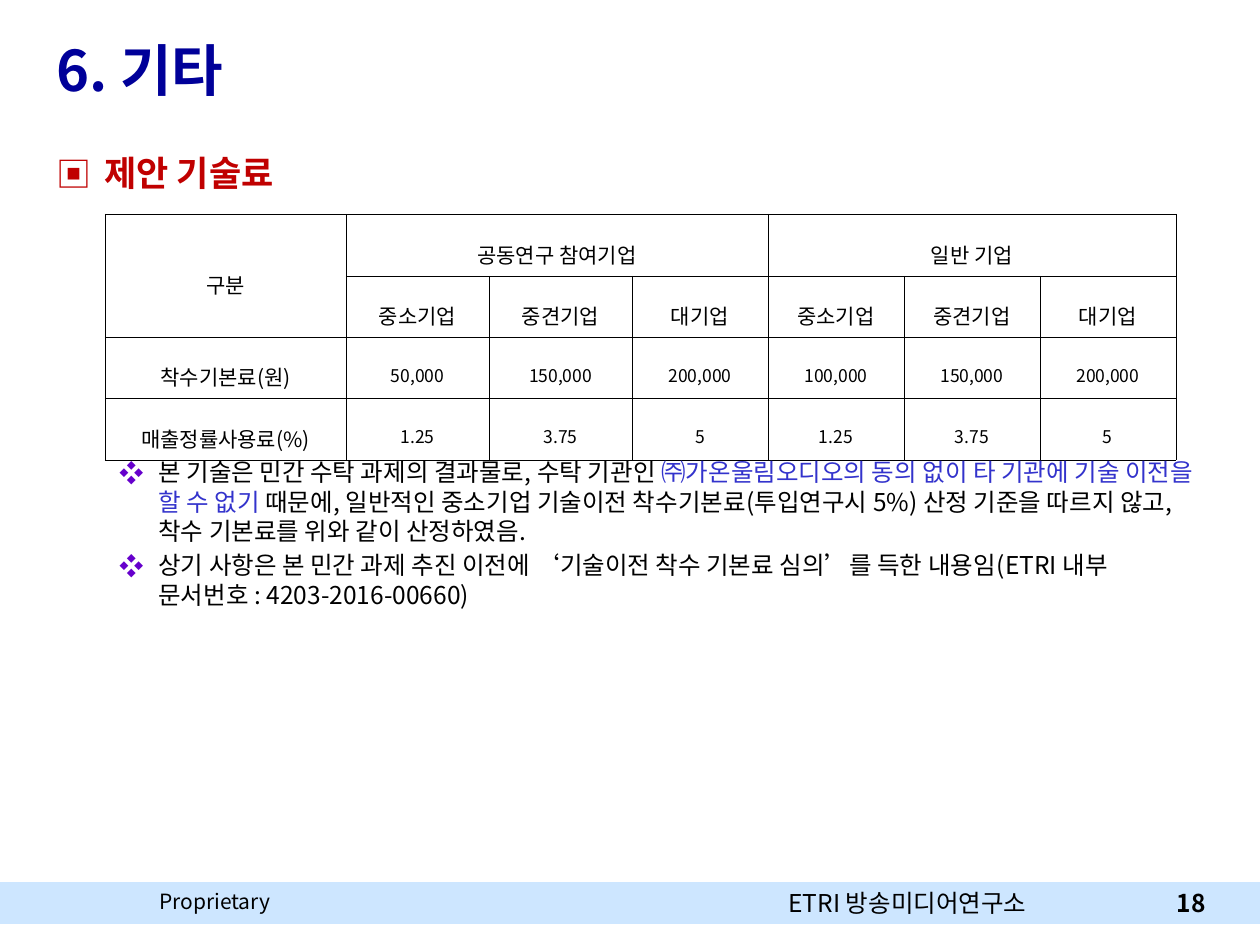
from pptx import Presentation
from pptx.dml.color import RGBColor
from pptx.enum.shapes import MSO_SHAPE
from pptx.enum.text import MSO_ANCHOR, PP_ALIGN
from pptx.oxml.ns import qn
from pptx.util import Emu, Pt
from lxml.etree import SubElement

PX = 914400 // 126
FONT = "Noto Sans CJK KR"
COLORS = {"black": "000000", "title": "000099", "heading": "C00000",
          "marker": "6600CC", "accent": "3333CC", "footer": "CDE6FF"}

TITLE = "6. 기타"
HEADING = "제안 기술료"
NOTES = [
    [("본 기술은 민간 수탁 과제의 결과물로, 수탁 기관인 ", "black"),
     ("㈜가온울림오디오의 동의 없이 타 기관에 기술 이전을 할 수 없기", "accent"),
     (" 때문에, 일반적인 중소기업 기술이전 착수기본료(투입연구시 5%) 산정 기준을 "
      "따르지 않고, 착수 기본료를 위와 같이 산정하였음.", "black")],
    [("상기 사항은 본 민간 과제 추진 이전에 ‘기술이전 착수 기본료 심의’를 득한 내용임"
      "(ETRI 내부 문서번호 : 4203-2016-00660)", "black")],
]
FEES = [
    ["구분", "공동연구 참여기업", "", "", "일반 기업", "", ""],
    ["", "중소기업", "중견기업", "대기업", "중소기업", "중견기업", "대기업"],
    ["착수기본료(원)", "50,000", "150,000", "200,000", "100,000", "150,000", "200,000"],
    ["매출정률사용료(%)", "1.25", "3.75", "5", "1.25", "3.75", "5"],
]
MERGES = [((0, 0), (1, 0)), ((0, 1), (0, 3)), ((0, 4), (0, 6))]
COL_WIDTHS = [241, 143, 143, 136, 136, 136, 136]
ROW_HEIGHTS = [62, 61, 61, 62]


def px(n):
    return Emu(n * PX)


def rgb(name):
    return RGBColor.from_string(COLORS[name])


def add_run(p, text, size=14, color="black", bold=False):
    r = p.add_run()
    r.text = text
    r.font.size, r.font.bold, r.font.name = Pt(size), bold, FONT
    r.font.color.rgb = rgb(color)
    SubElement(r._r.get_or_add_rPr(), qn("a:ea"), typeface=FONT)


def set_bullet(p, char, color, indent, hang):
    pPr = p._p.get_or_add_pPr()
    pPr.set("marL", str(px(indent)))
    pPr.set("indent", str(-px(hang)))
    clr = SubElement(pPr, qn("a:buClr"))
    SubElement(clr, qn("a:srgbClr"), val=COLORS[color])
    SubElement(pPr, qn("a:buFont"), typeface=FONT)
    SubElement(pPr, qn("a:buChar"), char=char)


def add_box(slide, box, text="", anchor=MSO_ANCHOR.TOP, align=PP_ALIGN.LEFT,
            wrap=True, **fmt):
    """Add a text box and return its text frame."""
    tf = slide.shapes.add_textbox(*map(px, box)).text_frame
    tf.word_wrap, tf.vertical_anchor = wrap, anchor
    p = tf.paragraphs[0]
    p.alignment = align
    if text:
        add_run(p, text, **fmt)
    return tf


def add_borders(cell):
    tcPr = cell._tc.get_or_add_tcPr()
    for i, side in enumerate(("lnL", "lnR", "lnT", "lnB")):
        ln = tcPr.makeelement(qn(f"a:{side}"), {"w": str(Pt(0.25))})
        fill = SubElement(ln, qn("a:solidFill"))
        SubElement(fill, qn("a:srgbClr"), val=COLORS["black"])
        tcPr.insert(i, ln)


def add_fee_table(slide):
    box = (105, 214, sum(COL_WIDTHS), sum(ROW_HEIGHTS))
    table = slide.shapes.add_table(len(FEES), len(COL_WIDTHS), *map(px, box)).table
    for col, width in zip(table.columns, COL_WIDTHS):
        col.width = px(width)
    for row, height in zip(table.rows, ROW_HEIGHTS):
        row.height = px(height)
    for i, texts in enumerate(FEES):
        for j, text in enumerate(texts):
            cell = table.cell(i, j)
            cell.fill.background()
            cell.vertical_anchor = MSO_ANCHOR.MIDDLE
            cell.margin_left = cell.margin_right = px(2)
            cell.margin_top = cell.margin_bottom = px(2)
            add_borders(cell)
            p = cell.text_frame.paragraphs[0]
            p.alignment, p.line_spacing = PP_ALIGN.CENTER, 1.6
            if text:
                add_run(p, text, size=10 if i > 1 and j else 12)
    for first, last in MERGES:
        table.cell(*first).merge(table.cell(*last))


def main():
    prs = Presentation()
    prs.slide_width, prs.slide_height = px(1260), px(945)
    slide = prs.slides.add_slide(prs.slide_layouts[6])

    band = slide.shapes.add_shape(MSO_SHAPE.RECTANGLE, *map(px, (0, 882, 1260, 42)))
    band.shadow.inherit = False
    band.fill.solid()
    band.fill.fore_color.rgb = rgb("footer")
    band.line.fill.background()
    add_box(slide, (147, 882, 168, 38), "Proprietary", size=12)
    add_box(slide, (776, 882, 333, 43), "ETRI 방송미디어연구소")
    add_box(slide, (1158, 882, 60, 42), "18", MSO_ANCHOR.MIDDLE, PP_ALIGN.RIGHT,
            wrap=False, bold=True)

    add_box(slide, (44, 30, 1071, 79), TITLE, MSO_ANCHOR.MIDDLE,
            size=32, color="title", bold=True)
    heading = add_box(slide, (44, 145, 1171, 56)).paragraphs[0]
    set_bullet(heading, "▣", "heading", indent=48, hang=48)
    add_run(heading, HEADING, size=20, color="heading", bold=True)

    add_fee_table(slide)

    tf = add_box(slide, (44, 451, 1171, 408))
    for i, runs in enumerate(NOTES):
        p = tf.add_paragraph() if i else tf.paragraphs[0]
        if i:
            p.space_before = Pt(2.8)
        set_bullet(p, "❖", "marker", indent=102, hang=39)
        for text, color in runs:
            add_run(p, text, color=color)
    prs.save("out.pptx")


if __name__ == "__main__":
    main()
